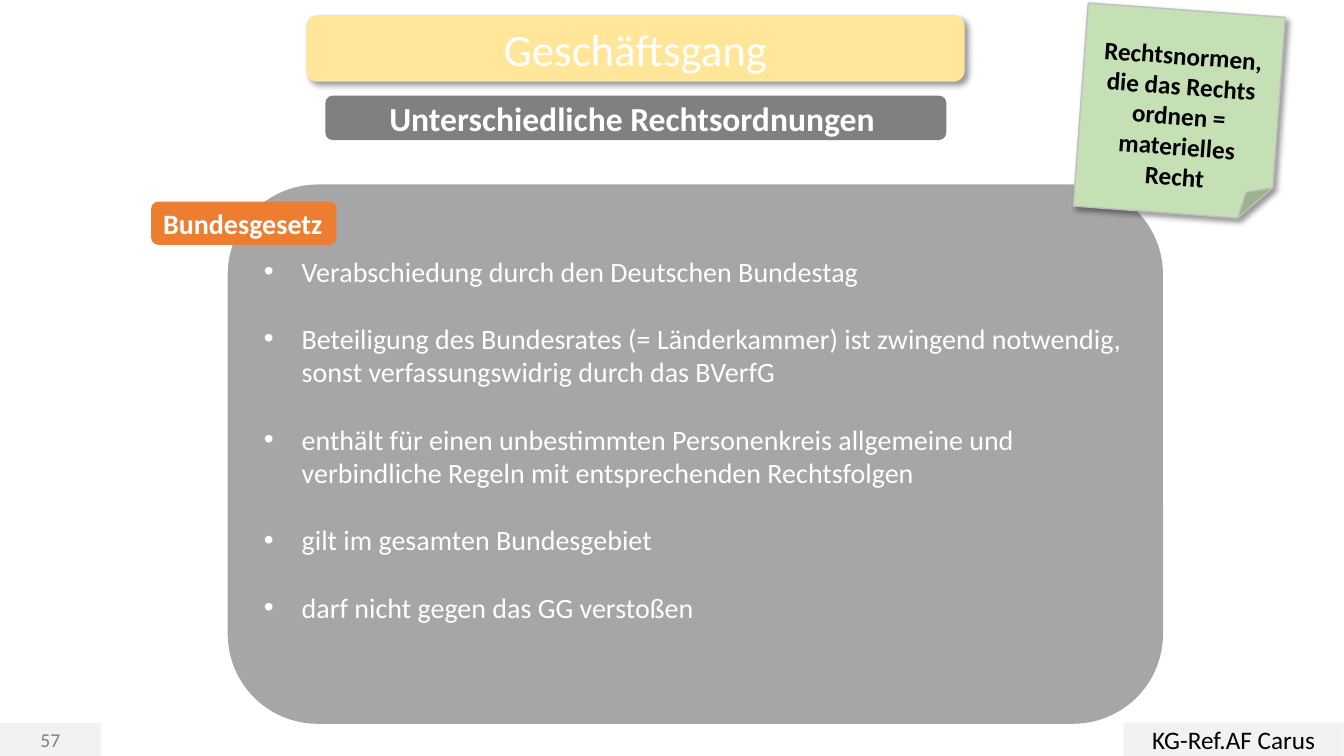
from lxml.etree import SubElement
from pptx import Presentation
from pptx.dml.color import RGBColor
from pptx.enum.shapes import MSO_SHAPE as Preset
from pptx.enum.text import MSO_ANCHOR as Anchor, MSO_AUTO_SIZE as AutoSize, PP_ALIGN as Align
from pptx.oxml.ns import qn
from pptx.util import Cm, Pt

WHITE, BLACK = "FFFFFF", "000000"
LIGHT_GREY, DARK_GREY = "F2F2F2", "808080"

RULES = [
    "Verabschiedung durch den Deutschen Bundestag",
    "Beteiligung des Bundesrates (= Länderkammer) ist zwingend notwendig, "
    "sonst verfassungswidrig durch das BVerfG",
    "enthält für einen unbestimmten Personenkreis allgemeine und "
    "verbindliche Regeln mit entsprechenden Rechtsfolgen",
    "gilt im gesamten Bundesgebiet",
    "darf nicht gegen das GG verstoßen",
]


def color(value):
    return RGBColor.from_string(value)


def write(para, text, size=18, ink=WHITE, bold=False, align=Align.CENTER, after=0):
    para.alignment = align
    para.line_spacing = 1.0
    para.space_before, para.space_after = Pt(0), Pt(after)
    span = para.add_run()
    span.text = text
    span.font.name = "Calibri"
    span.font.size = Pt(size)
    span.font.bold = bold
    span.font.color.rgb = color(ink)


def add_box(page, place, fill, preset=Preset.ROUNDED_RECTANGLE, line=None, text=None, **style):
    """Add a flat preset shape; place is left, top, width and height in cm."""
    box = page.shapes.add_shape(preset, *map(Cm, place))
    box.shadow.inherit = False
    box.fill.solid()
    box.fill.fore_color.rgb = color(fill)
    if line:
        box.line.color.rgb = color(line)
        box.line.width = Pt(1)
    else:
        box.line.fill.background()
    if text:
        frame = box.text_frame
        frame.word_wrap = True
        frame.vertical_anchor = Anchor.MIDDLE
        write(frame.paragraphs[0], text, **style)
    return box


def cast_shadow(box):
    effects = box.element.spPr.find(qn("a:effectLst"))
    shadow = SubElement(effects, qn("a:outerShdw"), blurRad=str(Pt(4)), dist=str(Pt(3)),
                        dir="2700000", algn="tl", rotWithShape="0")
    tint = SubElement(shadow, qn("a:srgbClr"), val=BLACK)
    SubElement(tint, qn("a:alpha"), val="40000")


def fill_placeholder(holder, place, behind, lines, anchor, **style):
    """Move a placeholder directly in front of the shape behind it and write its lines."""
    holder.left, holder.top, holder.width, holder.height = map(Cm, place)
    behind.element.addnext(holder.element)
    frame = holder.text_frame
    frame.word_wrap = True
    frame.auto_size = AutoSize.NONE
    frame.vertical_anchor = anchor
    frame.margin_left = frame.margin_right = frame.margin_top = frame.margin_bottom = 0
    for index, text in enumerate(lines):
        para = frame.add_paragraph() if index else frame.paragraphs[0]
        write(para, text, **style)


def add_note(page):
    note = add_box(page, (27.23, 0.25, 4.98, 5.13), "C5E0B4", Preset.FOLDED_CORNER, "BFBFBF",
                   "Rechtsnormen, die das Rechts ordnen = materielles Recht", ink=BLACK, bold=True)
    note.rotation = 4.2
    note.text_frame.margin_top = Cm(1.14)
    cast_shadow(note)


def main():
    deck = Presentation()
    deck.slide_width, deck.slide_height = Cm(33.87), Cm(19.05)
    page = deck.slides.add_slide(deck.slide_layouts[1])
    title, body = page.placeholders

    panel = add_box(page, (5.74, 4.65, 23.57, 13.59), "A6A6A6")
    fill_placeholder(body, (6.65, 6.4, 21.75, 9.5), panel, RULES, Anchor.TOP,
                     size=20, align=Align.LEFT, after=24)

    add_box(page, (0, 18.24, 2.54, 0.81), LIGHT_GREY, Preset.RECTANGLE, LIGHT_GREY,
            "57", size=14, ink=DARK_GREY)
    add_box(page, (28.32, 18.21, 5.54, 0.84), LIGHT_GREY, Preset.RECTANGLE,
            text="KG-Ref.AF Carus", ink=BLACK)
    add_box(page, (8.2, 2.41, 15.65, 1.12), DARK_GREY,
            text="Unterschiedliche Rechtsordnungen ", size=24, bold=True)

    title_place = (7.72, 0.38, 16.59, 1.68)
    banner = add_box(page, title_place, "FFE699")
    cast_shadow(banner)
    fill_placeholder(title, title_place, banner, ["Geschäftsgang"], Anchor.MIDDLE, size=32)

    law = add_box(page, (3.81, 5.08, 4.67, 1.09), "ED7D31",
                  text="Bundesgesetz", size=20, bold=True, align=Align.LEFT)
    law.text_frame.margin_right = 0
    add_note(page)
    deck.save("out.pptx")


if __name__ == "__main__":
    main()
